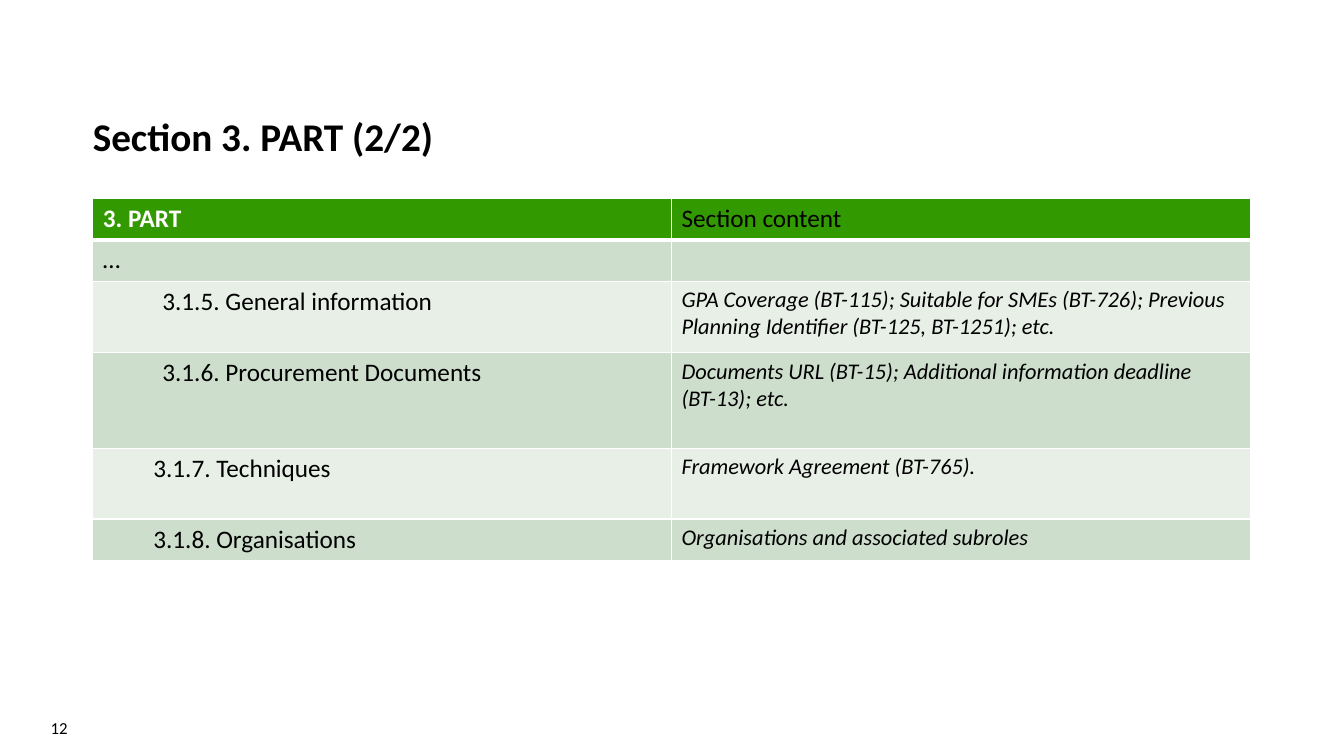
import dataclasses
import typing

import pptx
import pptx.dml.color
import pptx.enum.text
import pptx.oxml
import pptx.oxml.ns
import pptx.util

Inches = pptx.util.Inches
Pt = pptx.util.Pt
ANCHOR = pptx.enum.text.MSO_ANCHOR
ALIGN = pptx.enum.text.PP_ALIGN

COLORS = {
    "black": "000000",
    "white": "FFFFFF",
    "header": "339900",
    "band_dark": "CEDECC",
    "band_light": "E8EFE7",
}
FORMATS = {
    "title": {"size": Pt(28), "bold": True},
    "header": {"size": Pt(18), "bold": True},
    "section": {"size": Pt(18), "bold": False},
    "content": {"size": Pt(16), "bold": False, "italic": True},
    "number": {"size": Pt(12), "bold": False},
}


@dataclasses.dataclass
class Row:
    section: str
    content: str
    height: float
    level: int = 0
    indent: float = 0


@dataclasses.dataclass
class Label:
    text: str
    box: tuple[float, float, float, float]
    style: str
    frame: dict[str, typing.Any]
    paragraph: dict[str, typing.Any]


ROWS = [
    Row("3. PART", "Section content", 0.41),
    Row("…", "", 0.41),
    Row("3.1.5. General information",
        "GPA Coverage (BT-115); Suitable for SMEs (BT-726); "
        "Previous Planning Identifier (BT-125, BT-1251); etc.", 0.71, 3, 0.59),
    Row("3.1.6. Procurement Documents",
        "Documents URL (BT-15); Additional information deadline (BT-13); etc.",
        0.95, 3, 0.59),
    Row("3.1.7. Techniques", "Framework Agreement (BT-765).", 0.7, 1, 0.5),
    Row("3.1.8. Organisations", "Organisations and associated subroles", 0.41, 1, 0.5),
]
LABELS = [
    Label("Section 3. PART (2/2)", (0.92, 0.14, 11.48, 1.45), "title",
          {"vertical_anchor": ANCHOR.BOTTOM, "margin_left": 0, "margin_right": 0,
           "margin_top": Inches(0.05), "margin_bottom": 0},
          {"line_spacing": 0.9}),
    Label("12", (0, 7.02, 0.77, 0.4), "number",
          {"vertical_anchor": ANCHOR.MIDDLE}, {"alignment": ALIGN.RIGHT}),
]


def apply(target: typing.Any, values: dict[str, typing.Any]) -> None:
    for name, value in values.items():
        setattr(target, name, value)


def rgb(color: str) -> pptx.dml.color.RGBColor:
    return pptx.dml.color.RGBColor.from_string(COLORS[color])


def write(paragraph: typing.Any, text: str, style: str, color: str = "black") -> None:
    if not text:
        paragraph.font.size = FORMATS[style]["size"]
        return
    run = paragraph.add_run()
    run.text = text
    apply(run.font, {"name": "Calibri", **FORMATS[style]})
    run.font.color.rgb = rgb(color)


def add_label(slide: typing.Any, label: Label) -> None:
    frame = slide.shapes.add_textbox(*map(Inches, label.box)).text_frame
    apply(frame, {"word_wrap": True, **label.frame})
    apply(frame.paragraphs[0], label.paragraph)
    write(frame.paragraphs[0], label.text, label.style)


def set_borders(cell: typing.Any, widths: dict[str, int]) -> None:
    properties = cell._tc.get_or_add_tcPr()
    for side, width in widths.items():
        properties.append(pptx.oxml.parse_xml(
            f'<a:ln{side} {pptx.oxml.ns.nsdecls("a")} w="{Pt(width)}"><a:solidFill>'
            f'<a:srgbClr val="{COLORS["white"]}"/></a:solidFill></a:ln{side}>'))


def add_sections(slide: typing.Any, rows: list[Row]) -> None:
    height = sum(row.height for row in rows)
    table = slide.shapes.add_table(len(rows), 2, Inches(0.92), Inches(1.97),
                                   Inches(11.48), Inches(height)).table
    table.horz_banding = False
    for index, row in enumerate(rows):
        table.rows[index].height = Inches(row.height)
        header = index == 0
        band = "header" if header else ("band_light", "band_dark")[index % 2]
        section, content = table.cell(index, 0), table.cell(index, 1)

        # A thick rule separates the header from the body
        for cell in (section, content):
            set_borders(cell, {"L": 1, "R": 1, "T": 3 if index == 1 else 1,
                               "B": 3 if header else 1})
            cell.fill.solid()
            cell.fill.fore_color.rgb = rgb(band)

        # Section name, indented by its level
        name = section.text_frame.paragraphs[0]
        if row.level:
            name.level = row.level
            apply(name._p.get_or_add_pPr(), {})
            name._p.get_or_add_pPr().set("marL", str(Inches(row.indent)))
            name._p.get_or_add_pPr().set("indent", "0")
        write(name, row.section, "header" if header else "section",
              "white" if header else "black")

        # Section content
        write(content.text_frame.paragraphs[0], row.content,
              "section" if header or not row.content else "content")


def main() -> None:
    deck = pptx.Presentation()
    apply(deck, {"slide_width": Inches(13.33), "slide_height": Inches(7.5)})
    slide = deck.slides.add_slide(deck.slide_layouts[6])

    # Title and slide number
    for label in LABELS:
        add_label(slide, label)

    # Table of sections
    add_sections(slide, ROWS)
    deck.save("out.pptx")


if __name__ == "__main__":
    main()
